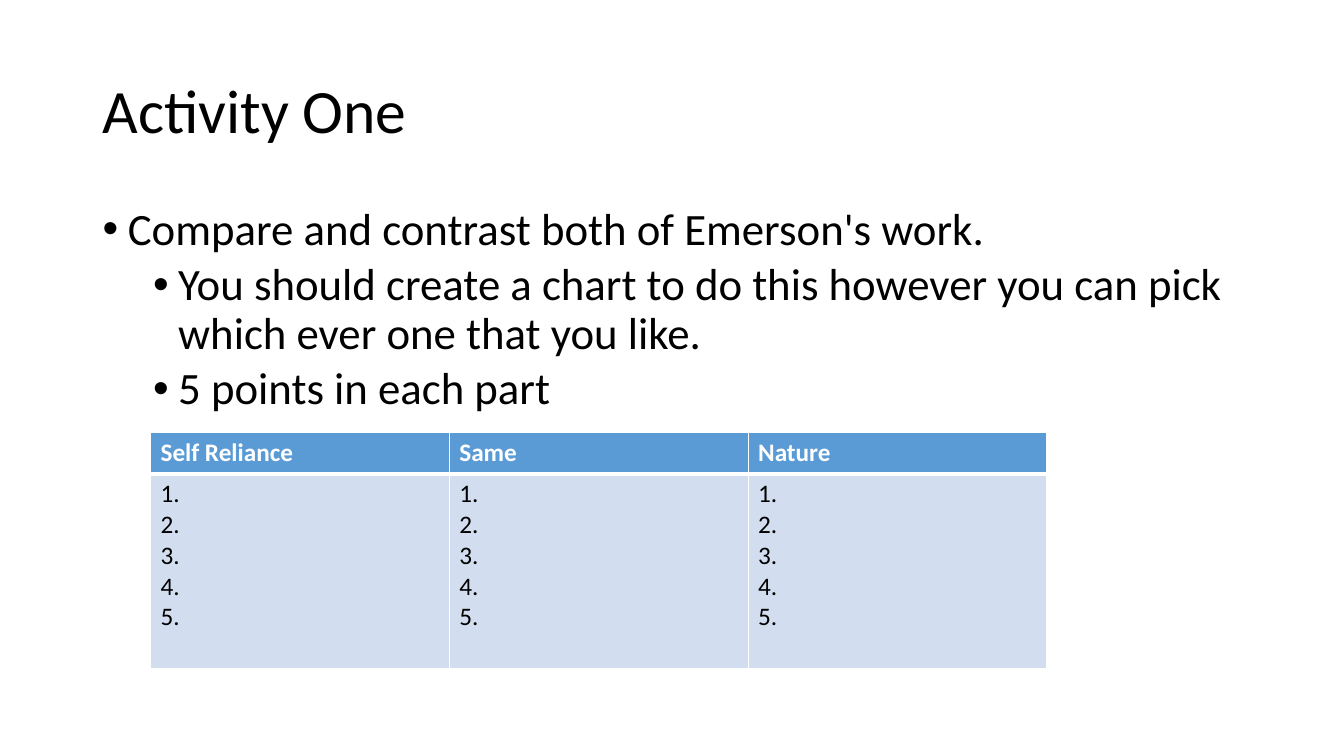
"""Build the Activity One slide with a bulleted task and a comparison table."""
from dataclasses import dataclass, field

import lxml.etree
import pptx
import pptx.dml.color
import pptx.enum.text
import pptx.oxml.ns
import pptx.util

WIDTH, HEIGHT = 13.33, 7.5


@dataclass(frozen=True)
class Theme:
    font: str = "Calibri"
    ink: str = "000000"
    paper: str = "FFFFFF"
    header: str = "5B9BD5"
    band: str = "D2DEEF"
    title: int = 44
    body: int = 32
    cell: int = 18


@dataclass(frozen=True)
class Box:
    x: float
    y: float
    w: float
    h: float

    def emu(self) -> list[int]:
        shares = (self.x * WIDTH, self.y * HEIGHT, self.w * WIDTH, self.h * HEIGHT)
        return [pptx.util.Inches(v) for v in shares]


@dataclass(frozen=True)
class Line:
    text: str
    level: int | None = None
    format: dict = field(default_factory=dict)


@dataclass(frozen=True)
class Column:
    heading: str
    points: int = 5


THEME = Theme()
TITLE_BOX = Box(0.069, 0.053, 0.863, 0.193)
BODY_BOX = Box(0.069, 0.267, 0.863, 0.635)
TABLE_BOX = Box(0.112, 0.572, 0.667, 0.313)
HEADER_SHARE = 0.175

TASK = [
    Line("Compare and contrast both of Emerson's work.", 0,
         {"line_spacing": 0.9, "space_before": pptx.util.Pt(10)}),
    *(Line(text, 1, {"line_spacing": 0.9, "space_before": pptx.util.Pt(5), "level": 1})
      for text in (
          "You should create a chart to do this however you can pick which ever one that you like.",
          "5 points in each part",
      )),
]
COLUMNS = [Column("Self Reliance"), Column("Same"), Column("Nature")]


def apply(target: object, values: dict) -> None:
    for name, value in values.items():
        setattr(target, name, value)


def rgb(code: str) -> pptx.dml.color.RGBColor:
    return pptx.dml.color.RGBColor.from_string(code)


def add_bullet(p: object, level: int) -> None:
    pPr = p._p.get_or_add_pPr()
    pPr.set("marL", str(pptx.util.Inches(0.25 + 0.5 * level)))
    pPr.set("indent", str(pptx.util.Inches(-0.25)))
    for tag, name, value in (("a:buFont", "typeface", "Arial"), ("a:buChar", "char", "•")):
        lxml.etree.SubElement(pPr, pptx.oxml.ns.qn(tag)).set(name, value)


def write_lines(tf: object, lines: list[Line], size: int, color: str, bold: bool = False) -> None:
    for i, line in enumerate(lines):
        p = tf.paragraphs[0] if i == 0 else tf.add_paragraph()
        apply(p, line.format)
        if line.level is not None:
            add_bullet(p, line.level)
        r = p.add_run()
        r.text = line.text
        apply(r.font, {"name": THEME.font, "size": pptx.util.Pt(size), "bold": bold})
        r.font.color.rgb = rgb(color)


def add_text(s: object, box: Box, lines: list[Line], size: int,
             anchor: pptx.enum.text.MSO_ANCHOR) -> None:
    tf = s.shapes.add_textbox(*box.emu()).text_frame
    apply(tf, {"word_wrap": True, "vertical_anchor": anchor})
    write_lines(tf, lines, size, THEME.ink)


def style_cell(cell: object, fill: str, borders: dict[str, int]) -> None:
    tcPr = cell._tc.get_or_add_tcPr()
    for side, width in borders.items():
        ln = lxml.etree.SubElement(tcPr, pptx.oxml.ns.qn(f"a:ln{side}"))
        ln.set("w", str(pptx.util.Pt(width)))
        solid = lxml.etree.SubElement(ln, pptx.oxml.ns.qn("a:solidFill"))
        lxml.etree.SubElement(solid, pptx.oxml.ns.qn("a:srgbClr")).set("val", THEME.paper)
    cell.fill.solid()
    cell.fill.fore_color.rgb = rgb(fill)


def add_comparison(s: object, box: Box, columns: list[Column]) -> None:
    table = s.shapes.add_table(2, len(columns), *box.emu()).table
    height = box.emu()[3]
    table.rows[0].height = int(height * HEADER_SHARE)
    table.rows[1].height = height - table.rows[0].height
    for i, column in enumerate(columns):
        head, body = table.cell(0, i), table.cell(1, i)
        style_cell(head, THEME.header, {"L": 1, "R": 1, "T": 1, "B": 3})
        style_cell(body, THEME.band, {"L": 1, "R": 1, "T": 3, "B": 1})
        write_lines(head.text_frame, [Line(column.heading)], THEME.cell, THEME.paper, True)
        points = [Line(f"{n}.") for n in range(1, column.points + 1)]
        write_lines(body.text_frame, points, THEME.cell, THEME.ink)


def main() -> None:
    prs = pptx.Presentation()
    apply(prs, {"slide_width": pptx.util.Inches(WIDTH), "slide_height": pptx.util.Inches(HEIGHT)})
    s = prs.slides.add_slide(prs.slide_layouts[6])
    title = [Line("Activity One", format={"line_spacing": 0.9})]
    add_text(s, TITLE_BOX, title, THEME.title, pptx.enum.text.MSO_ANCHOR.MIDDLE)
    add_text(s, BODY_BOX, TASK, THEME.body, pptx.enum.text.MSO_ANCHOR.TOP)
    add_comparison(s, TABLE_BOX, COLUMNS)
    prs.save("out.pptx")


if __name__ == "__main__":
    main()
